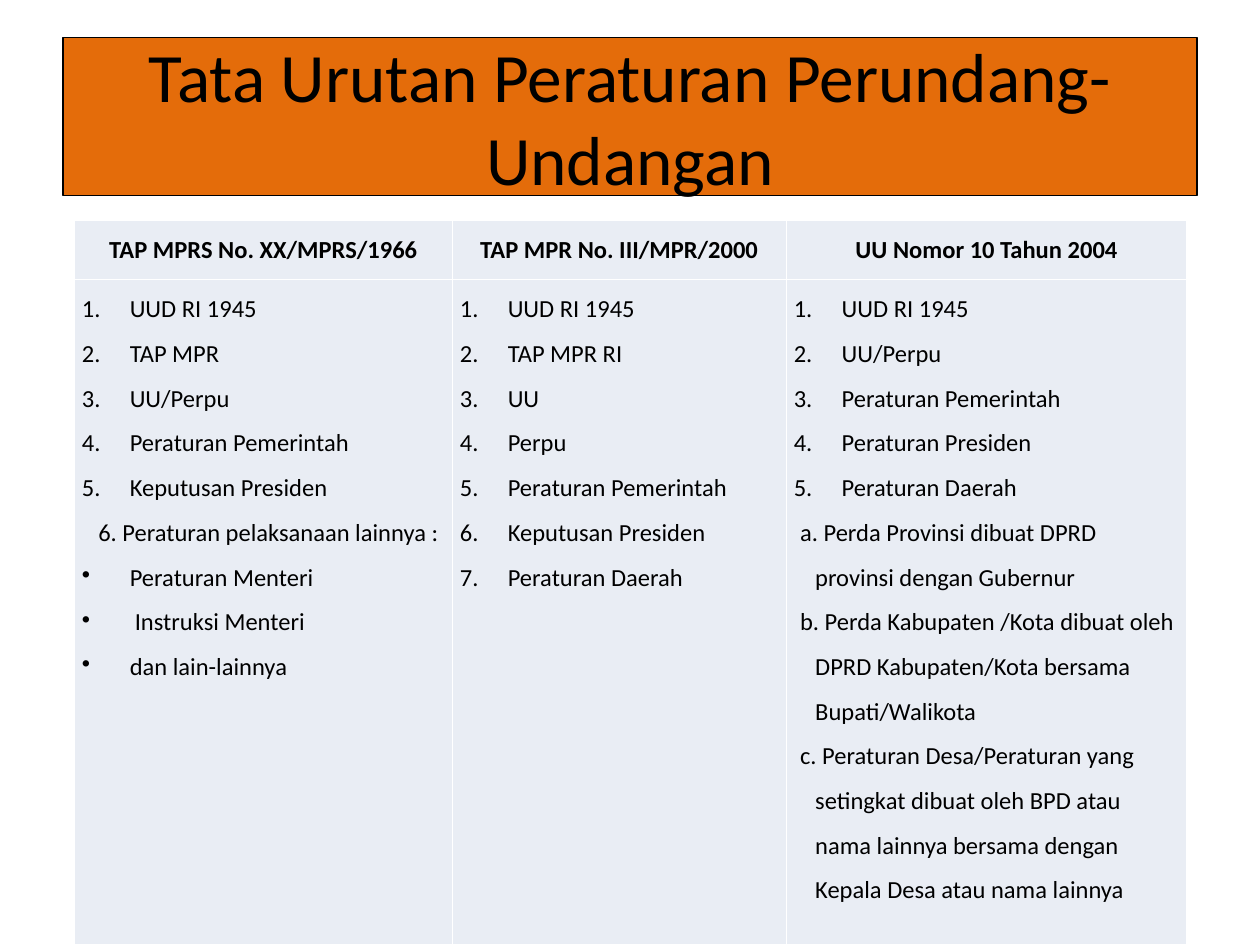
from lxml import etree
from pptx import Presentation, util as u
from pptx.dml.color import RGBColor
from pptx.enum import text
from pptx.oxml.ns import qn

BLACK, WHITE, ORANGE, PALE = "000000", "FFFFFF", "E46C0A", "E9EDF4"
NUM = ("buAutoNum", {"type": "arabicPeriod"})
DOT = ("buChar", {"char": "•"})

HEADS = ["TAP MPRS No. XX/MPRS/1966", "TAP MPR No. III/MPR/2000",
         "UU Nomor 10 Tahun 2004"]
LISTS = [
    [(NUM, 0.38, -0.38, ["UUD RI 1945", "TAP MPR", "UU/Perpu",
                         "Peraturan Pemerintah", "Keputusan Presiden"]),
     (None, 0.13, 0, ["6. Peraturan pelaksanaan lainnya :"]),
     (DOT, 0.38, -0.38, ["Peraturan Menteri"]),
     (DOT, 0.42, -0.42, ["Instruksi Menteri"]),
     (DOT, 0.38, -0.38, ["dan lain-lainnya"])],
    [(NUM, 0.38, -0.38, ["UUD RI 1945", "TAP MPR RI", "UU", "Perpu",
                         "Peraturan Pemerintah", "Keputusan Presiden",
                         "Peraturan Daerah"])],
    [(NUM, 0.38, -0.38, ["UUD RI 1945", "UU/Perpu", "Peraturan Pemerintah",
                         "Peraturan Presiden", "Peraturan Daerah"]),
     (None, 0.17, -0.12, [
         "a. Perda Provinsi dibuat DPRD provinsi dengan Gubernur",
         "b. Perda Kabupaten /Kota dibuat oleh DPRD Kabupaten/Kota "
         "bersama Bupati/Walikota",
         "c. Peraturan Desa/Peraturan yang setingkat dibuat oleh BPD atau "
         "nama lainnya bersama dengan Kepala Desa atau nama lainnya"])],
]


def tint(code):
    return RGBColor.from_string(code)


def put(obj, vals):
    for key, val in vals.items():
        setattr(obj, key, val)


def add(node, tag, **vals):
    return etree.SubElement(node, qn("a:" + tag), vals)


class Deck:
    cols, rows = 20, 30
    face = {"name": "Calibri", "size": u.Pt(14), "bold": False}
    edge = {"margin_left": u.Inches(0.06), "margin_right": u.Inches(0.06),
            "margin_top": 0, "margin_bottom": 0}

    def __init__(self):
        self.prs = Presentation()
        put(self.prs, {"slide_width": u.Inches(10), "slide_height": u.Inches(7.5)})
        self.slide = self.prs.slides.add_slide(self.prs.slide_layouts[5])

    def box(self, x, y, w, h):
        dx = self.prs.slide_width / self.cols
        dy = self.prs.slide_height / self.rows
        return [int(x * dx), int(y * dy), int(w * dx), int(h * dy)]

    def font(self, para, **vals):
        put(para.font, {**self.face, **vals})
        para.font.color.rgb = tint(BLACK)

    def title(self, words, *area):
        shape = self.slide.shapes.title
        put(shape, dict(zip(("left", "top", "width", "height"), self.box(*area))))
        shape.fill.solid()
        shape.fill.fore_color.rgb = tint(ORANGE)
        shape.line.color.rgb = tint(BLACK)
        shape.line.width = u.Pt(0.75)
        shape.text_frame.text = words
        put(shape.text_frame, {"word_wrap": True,
                               "vertical_anchor": text.MSO_ANCHOR.MIDDLE})
        para = shape.text_frame.paragraphs[0]
        para.alignment = text.PP_ALIGN.CENTER
        self.font(para, size=u.Pt(39.6))

    def cell(self, cell):
        put(cell, self.edge)
        props = cell._tc.get_or_add_tcPr()
        for side in ("lnL", "lnR", "lnT", "lnB"):
            line = add(props, side, w=str(u.Pt(1)))
            add(add(line, "solidFill"), "srgbClr", val=WHITE)
        cell.fill.solid()
        cell.fill.fore_color.rgb = tint(PALE)

    def items(self, cell, groups):
        frame = cell.text_frame
        flat = [(mark, left, hang, words)
                for mark, left, hang, lines in groups for words in lines]
        for i, (mark, left, hang, words) in enumerate(flat):
            para = frame.add_paragraph() if i else frame.paragraphs[0]
            para.text = words
            para.line_spacing = 1.5
            self.font(para)
            props = para._p.get_or_add_pPr()
            props.set("marL", str(u.Inches(left)))
            props.set("indent", str(u.Inches(hang)))
            if mark:
                spot = props.find(qn("a:defRPr"))
                node = etree.Element(qn("a:" + mark[0]), mark[1])
                if spot is None:
                    props.append(node)
                else:
                    spot.addprevious(node)

    def table(self, heads, lists, wide, high, *area):
        grid = self.slide.shapes.add_table(2, len(heads), *self.box(*area)).table
        put(grid, {"first_row": False, "horz_banding": False})
        for col, size in zip(grid.columns, wide):
            col.width = u.Inches(size)
        for row, size in zip(grid.rows, high):
            row.height = u.Inches(size)
        for i, (head, groups) in enumerate(zip(heads, lists)):
            top, body = grid.cell(0, i), grid.cell(1, i)
            self.cell(top)
            self.cell(body)
            top.text = head
            para = top.text_frame.paragraphs[0]
            put(para, {"alignment": text.PP_ALIGN.CENTER, "line_spacing": 1.5})
            self.font(para, bold=True)
            self.items(body, groups)


deck = Deck()
deck.title("Tata Urutan Peraturan Perundang-Undangan", 1, 1.2, 18, 5)
deck.table(HEADS, LISTS, (3, 2.65, 3.18), (0.47, 5.28), 1.18, 7, 17.66, 23)
deck.prs.save("out.pptx")
